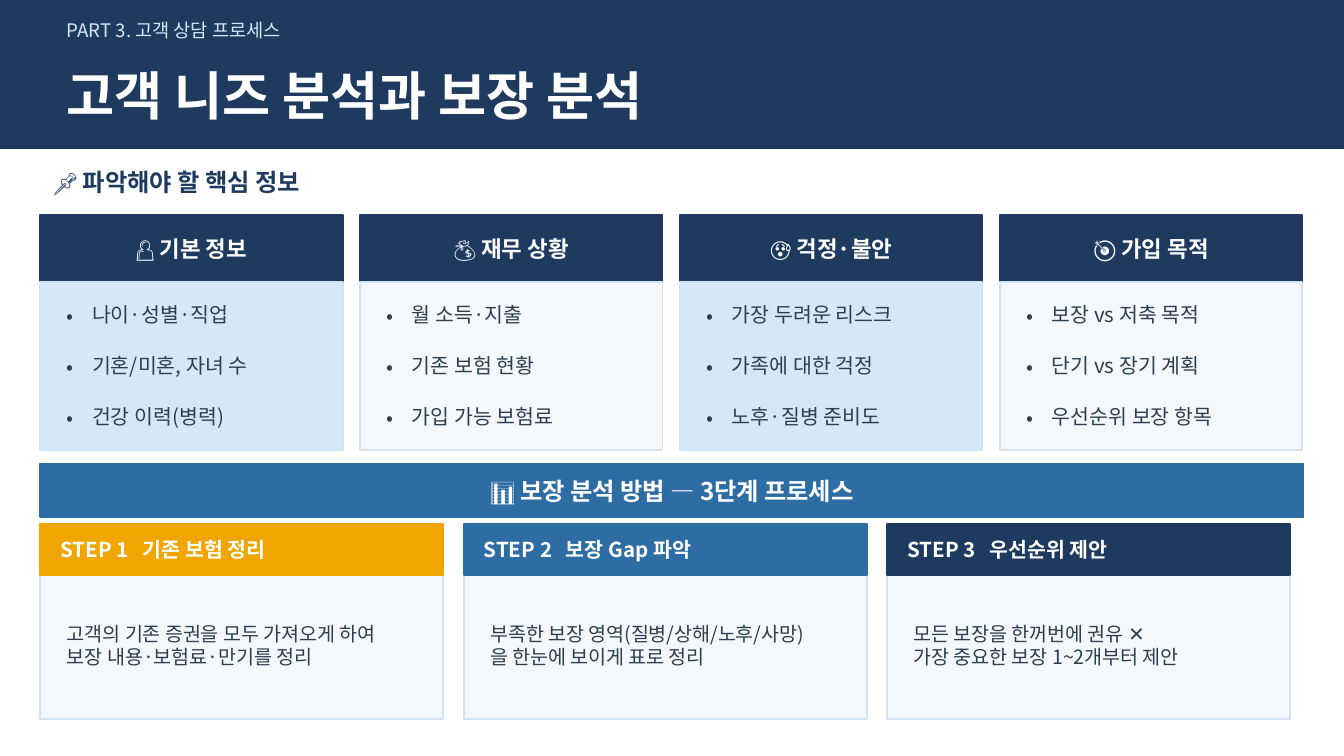
from dataclasses import dataclass

from lxml import etree
from pptx import Presentation
from pptx.dml.color import RGBColor
from pptx.enum.shapes import MSO_SHAPE
from pptx.enum.text import MSO_ANCHOR, PP_ALIGN
from pptx.oxml.ns import qn
from pptx.util import Pt

RECT = MSO_SHAPE.RECTANGLE
MIDDLE = MSO_ANCHOR.MIDDLE
LEFT, CENTER = PP_ALIGN.LEFT, PP_ALIGN.CENTER


@dataclass(frozen=True)
class Theme:
    font: str = "Noto Sans CJK KR"
    navy: str = "1E3A5F"
    blue: str = "2E6DA4"
    amber: str = "F0A500"
    sky: str = "D6E8F8"
    pale: str = "F4F7FB"
    border: str = "D0E4F5"
    ink: str = "2C3E50"
    white: str = "FFFFFF"
    title: float = 28
    section: float = 13
    card: float = 12
    item: float = 11
    body: float = 10.5
    kicker: float = 10


T = Theme()

CARDS = [
    ("👤 기본 정보", T.sky, ["나이·성별·직업", "기혼/미혼, 자녀 수", "건강 이력(병력)"]),
    ("💰 재무 상황", T.pale, ["월 소득·지출", "기존 보험 현황", "가입 가능 보험료"]),
    ("😰 걱정·불안", T.sky, ["가장 두려운 리스크", "가족에 대한 걱정", "노후·질병 준비도"]),
    ("🎯 가입 목적", T.pale, ["보장 vs 저축 목적", "단기 vs 장기 계획", "우선순위 보장 항목"]),
]
STEPS = [
    ("기존 보험 정리", T.amber,
     ["고객의 기존 증권을 모두 가져오게 하여", "보장 내용·보험료·만기를 정리"]),
    ("보장 Gap 파악", T.blue,
     ["부족한 보장 영역(질병/상해/노후/사망)", "을 한눈에 보이게 표로 정리"]),
    ("우선순위 제안", T.navy,
     ["모든 보장을 한꺼번에 권유 ✕", "가장 중요한 보장 1~2개부터 제안"]),
]


def write(sp, lines, size, color, bold=False, align=LEFT, inset=7.2):
    tf = sp.text_frame
    frame_format = {"word_wrap": True, "vertical_anchor": MIDDLE, "margin_left": Pt(inset)}
    for name, value in frame_format.items():
        setattr(tf, name, value)
    for i, line in enumerate(lines):
        p = tf.paragraphs[0] if i == 0 else tf.add_paragraph()
        p.alignment = align
        r = p.add_run()
        r.text = line
        for name, value in {"name": T.font, "size": Pt(size), "bold": bold}.items():
            setattr(r.font, name, value)
        r.font.color.rgb = RGBColor.from_string(color)
        etree.SubElement(r._r.get_or_add_rPr(), qn("a:ea"), typeface=T.font)
    return tf.paragraphs[0]


def add_rect(s, box, fill, line=None):
    sp = s.shapes.add_shape(RECT, *map(Pt, box))
    sp.shadow.inherit = False
    sp.fill.solid()
    sp.fill.fore_color.rgb = RGBColor.from_string(fill)
    sp.line.color.rgb = RGBColor.from_string(line or fill)
    sp.line.width = Pt(1)
    return sp


def add_text(s, box, lines, size, color, bold=False):
    return write(s.shapes.add_textbox(*map(Pt, box)), lines, size, color, bold)


def add_bullet(p, indent):
    pPr = p._p.get_or_add_pPr()
    pPr.set("marL", str(Pt(indent)))
    pPr.set("indent", str(-Pt(indent)))
    etree.SubElement(pPr, qn("a:buFont"), typeface=T.font)
    etree.SubElement(pPr, qn("a:buChar"), char="•")


def add_tab(p, position):
    tabs = etree.SubElement(p._p.get_or_add_pPr(), qn("a:tabLst"))
    etree.SubElement(tabs, qn("a:tab"), pos=str(Pt(position)), algn="l")


def add_header(s, box, kicker, title):
    x, y, w, h = box
    add_rect(s, box, T.navy)
    add_text(s, (x + 28.8, y + 3.6, w - 72, 25.2), [kicker], T.kicker, T.sky)
    add_text(s, (x + 28.8, y + 27.36, w - 72, 46.8), [title], T.title, T.white, True)


def add_card(s, box, heading, fill, items):
    x, y, w, h = box
    head_h, row_h = 36, 27.36
    head = add_rect(s, (x, y, w, head_h), T.navy)
    write(head, [heading], T.card, T.white, True, CENTER)
    add_rect(s, (x, y + head_h, w, h - head_h), fill, T.border)
    for i, item in enumerate(items):
        row = (x + 7.2, y + head_h + 3.6 + i * row_h, w - 14.4, row_h)
        add_bullet(add_text(s, row, [item], T.item, T.ink), 13.4)


def add_band(s, box, text):
    write(add_rect(s, box, T.blue), [text], T.section, T.white, True, CENTER)


def add_step(s, box, number, name, color, lines):
    x, y, w, h = box
    add_rect(s, box, T.pale, T.border)
    head = add_rect(s, (x, y, w, 27.36), color)
    p = write(head, [f"STEP {number}\t{name}"], T.item, T.white, True, inset=10.8)
    add_tab(p, 44)
    add_text(s, (x + 7.2, y + 28.8, w - 14.4, 72), lines, T.body, T.ink)


def main():
    prs = Presentation()
    prs.slide_width, prs.slide_height = Pt(720), Pt(405)
    s = prs.slides.add_slide(prs.slide_layouts[6])
    left, width = 21.6, 676.8

    add_header(s, (0, 0, 720, 79.2), "PART 3. 고객 상담 프로세스", "고객 니즈 분석과 보장 분석")
    add_text(s, (left, 82.8, width, 28.8), ["📌 파악해야 할 핵심 정보"], T.section, T.navy, True)
    for i, card in enumerate(CARDS):
        add_card(s, (left + i * 171.36, 115.2, 162, 126), *card)
    add_band(s, (left, 248.4, width, 28.8), "📊 보장 분석 방법 — 3단계 프로세스")
    for i, step in enumerate(STEPS):
        add_step(s, (left + i * 226.8, 280.8, 216, 104.4), i + 1, *step)

    prs.save("out.pptx")


if __name__ == "__main__":
    main()
